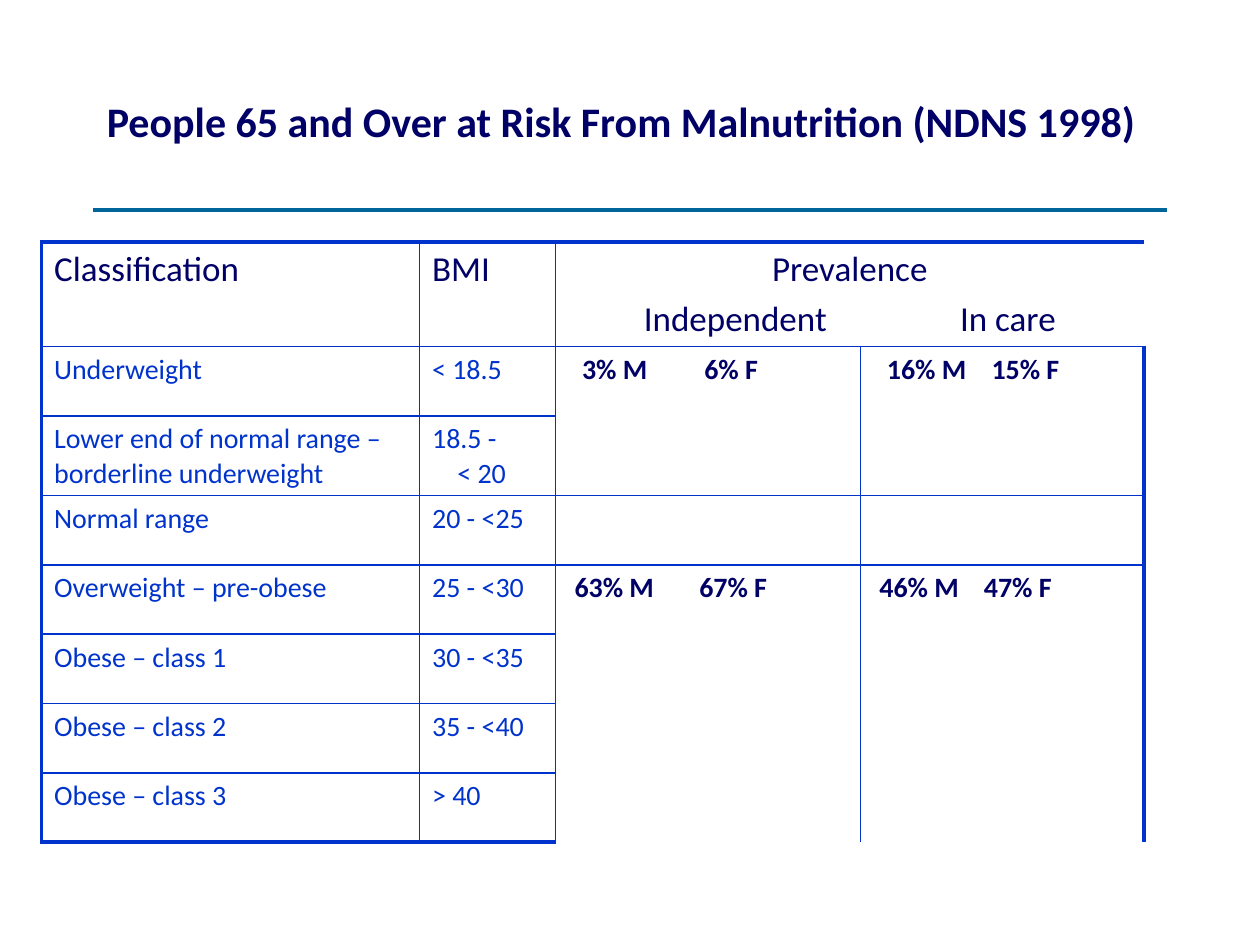
from lxml import etree
from pptx import Presentation
from pptx.dml.color import RGBColor
from pptx.enum.shapes import MSO_CONNECTOR
from pptx.enum.text import MSO_ANCHOR, PP_ALIGN
from pptx.oxml.ns import qn
from pptx.util import Inches, Pt

STRAIGHT = MSO_CONNECTOR.STRAIGHT
MIDDLE = MSO_ANCHOR.MIDDLE
LEFT, CENTER = PP_ALIGN.LEFT, PP_ALIGN.CENTER
SLIDE_WIDTH, SLIDE_HEIGHT = 10, 7.5
NAVY, BLUE, TEAL = "000066", "0033CC", "006699"
THIN, THICK = 1, 2.25

TITLE = {"size": 24, "bold": True, "color": NAVY}
HEADING = {"size": 20, "bold": False, "color": NAVY}
LABEL = {"size": 16, "bold": False, "color": BLUE}
FIGURE = {"size": 16, "bold": True, "color": NAVY}

COLUMN_WIDTHS = [3, 1.08, 2.42, 2.25]
ROW_HEIGHTS = [0.83, 0.55, 0.63] + [0.55] * 5
CLASSES = [
    ("Underweight", "< 18.5"),
    ("Lower end of normal range – borderline underweight", "18.5 -\v< 20"),
    ("Normal range", "20 - <25"),
    ("Overweight – pre-obese", "25 - <30"),
    ("Obese – class 1", "30 - <35"),
    ("Obese – class 2", "35 - <40"),
    ("Obese – class 3", "> 40"),
]
PREVALENCE = [
    (1, 2, "\t3% M\t6% F", (0.11, 1.08)),
    (1, 3, "\t16% M\t15% F", (0.11, 0.94)),
    (4, 2, "\t63% M\t67% F", (0.05, 1.04)),
    (4, 3, "\t46% M\t47% F", (0.05, 0.88)),
]
MERGES = [(0, 2, 0, 3), (1, 2, 2, 2), (1, 3, 2, 3), (4, 2, 7, 2), (4, 3, 7, 3)]


def rgb(hex_color):
    return RGBColor.from_string(hex_color)


def across(share):
    return Inches(SLIDE_WIDTH * share)


def down(share):
    return Inches(SLIDE_HEIGHT * share)


def write(paragraph, wording, look, align=LEFT, tabs=(), hanging=0):
    paragraph.text = wording
    paragraph.alignment = align
    paragraph.space_before = Pt(look["size"] * 0.2)
    font_values = {"name": "Calibri", "size": Pt(look["size"]), "bold": look["bold"]}
    for run in paragraph.runs:
        for attribute, value in font_values.items():
            setattr(run.font, attribute, value)
        run.font.color.rgb = rgb(look["color"])
    properties = paragraph._p.get_or_add_pPr()
    if hanging:
        properties.set("marL", str(Inches(hanging)))
        properties.set("indent", str(-Inches(hanging)))
    if tabs:
        tab_list = etree.SubElement(properties, qn("a:tabLst"))
        for position in tabs:
            etree.SubElement(tab_list, qn("a:tab"), pos=str(Inches(position)), algn="l")


def add_title(slide, wording):
    title = slide.shapes.add_textbox(across(0.075), down(0.033), across(0.85), down(0.19))
    frame = title.text_frame
    for attribute, value in {"word_wrap": True, "vertical_anchor": MIDDLE}.items():
        setattr(frame, attribute, value)
    write(frame.paragraphs[0], wording, TITLE)


def add_rule(slide):
    height = down(0.2225)
    rule = slide.shapes.add_connector(STRAIGHT, across(0.074), height, across(0.926), height)
    rule.line.color.rgb = rgb(TEAL)
    rule.line.width = Pt(THICK)
    etree.SubElement(rule._element.spPr, qn("a:effectLst"))


def merged_area(row, column):
    for top, left, bottom, right in MERGES:
        if top <= row <= bottom and left <= column <= right:
            return top, left, bottom, right
    return row, column, row, column


def draw_borders(cell, row, column):
    top, left, bottom, right = merged_area(row, column)
    last_row, last_column = len(ROW_HEIGHTS) - 1, len(COLUMN_WIDTHS) - 1
    edges = {
        "a:lnL": (column == left, column == 0),
        "a:lnR": (column == right, column == last_column),
        "a:lnT": (row == top, row == 0),
        "a:lnB": (row == bottom, row == last_row),
    }
    properties = cell._tc.get_or_add_tcPr()
    for tag, (visible, outer) in edges.items():
        border = etree.SubElement(properties, qn(tag), w=str(Pt(THICK if outer else THIN)))
        if visible:
            fill = etree.SubElement(border, qn("a:solidFill"))
            etree.SubElement(fill, qn("a:srgbClr"), val=BLUE)
        else:
            etree.SubElement(border, qn("a:noFill"))


def add_grid(slide):
    frame = slide.shapes.add_table(
        len(ROW_HEIGHTS), len(COLUMN_WIDTHS), across(0.033), down(0.256),
        Inches(sum(COLUMN_WIDTHS)), Inches(sum(ROW_HEIGHTS)))
    table = frame.table
    for attribute in ("first_row", "horz_banding"):
        setattr(table, attribute, False)
    for column, width in zip(table.columns, COLUMN_WIDTHS):
        column.width = Inches(width)
    for row, height in zip(table.rows, ROW_HEIGHTS):
        row.height = Inches(height)
    for top, left, bottom, right in MERGES:
        table.cell(top, left).merge(table.cell(bottom, right))
    for row in range(len(ROW_HEIGHTS)):
        for column in range(len(COLUMN_WIDTHS)):
            cell = table.cell(row, column)
            draw_borders(cell, row, column)
            cell.fill.background()
    return table


def fill_grid(table):
    def first_paragraph(row, column):
        return table.cell(row, column).text_frame.paragraphs[0]

    for column, heading in enumerate(("Classification", "BMI")):
        write(first_paragraph(0, column), heading, HEADING)
    write(first_paragraph(0, 2), "Prevalence", HEADING, CENTER)
    settings = table.cell(0, 2).text_frame.add_paragraph()
    write(settings, "\tIndependent\tIn care", HEADING, tabs=(0.6, 3.11))
    for row, (classification, bmi) in enumerate(CLASSES, start=1):
        write(first_paragraph(row, 0), classification, LABEL)
        write(first_paragraph(row, 1), bmi, LABEL, hanging=0.2 if "\v" in bmi else 0)
    for row, column, figures, tabs in PREVALENCE:
        write(first_paragraph(row, column), figures, FIGURE, tabs=tabs)


def main():
    deck = Presentation()
    deck.slide_width, deck.slide_height = across(1), down(1)
    slide = deck.slides.add_slide(deck.slide_layouts[6])
    add_rule(slide)
    add_title(slide, "People 65 and Over at Risk From Malnutrition (NDNS 1998)")
    fill_grid(add_grid(slide))
    deck.save("out.pptx")


if __name__ == "__main__":
    main()
